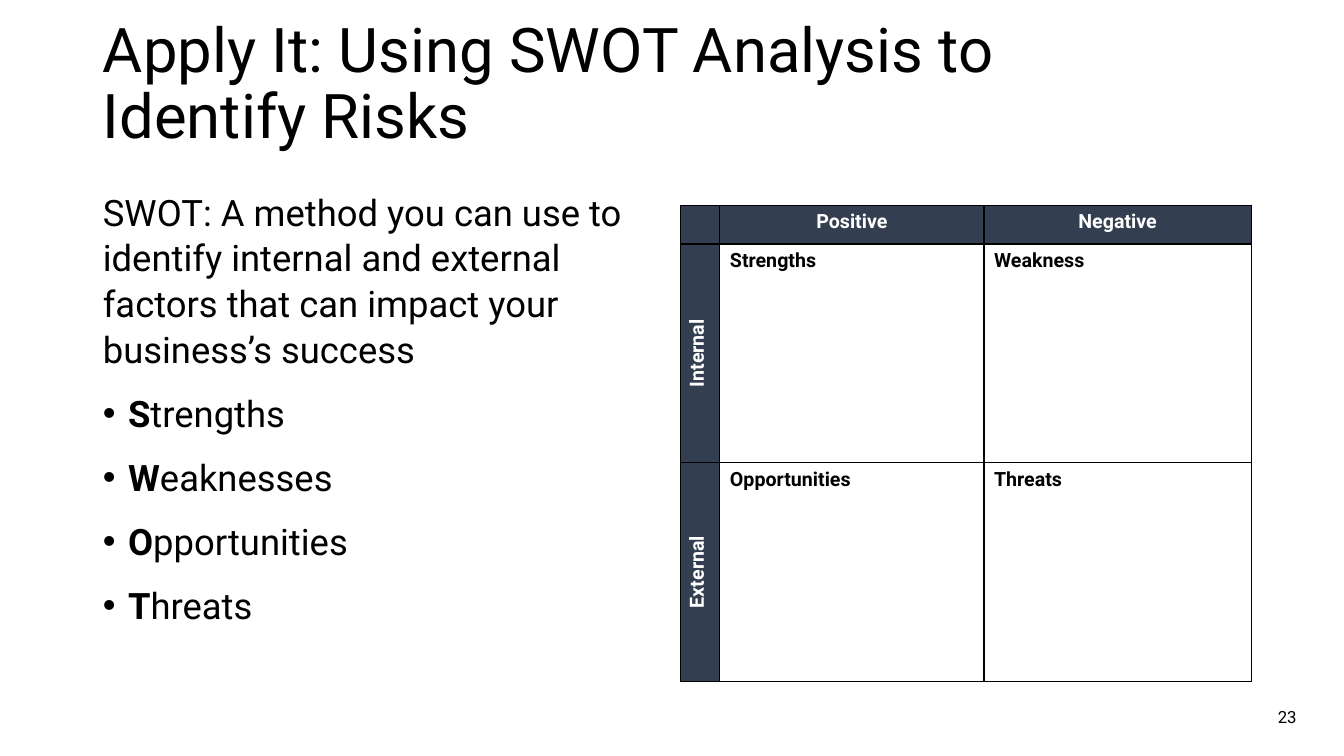
from lxml import etree
from pptx import Presentation
from pptx.dml.color import RGBColor
from pptx.enum.text import MSO_ANCHOR, MSO_AUTO_SIZE, PP_ALIGN
from pptx.oxml.ns import qn
from pptx.util import Inches, Pt

LEFT, CENTER, RIGHT = PP_ALIGN.LEFT, PP_ALIGN.CENTER, PP_ALIGN.RIGHT
TOP, MIDDLE, BOTTOM = MSO_ANCHOR.TOP, MSO_ANCHOR.MIDDLE, MSO_ANCHOR.BOTTOM
NO_FIT = MSO_AUTO_SIZE.NONE

FONT = "Roboto"
BLACK, WHITE, NAVY = "000000", "FFFFFF", "333F50"

TITLE = "Apply It: Using SWOT Analysis to Identify Risks"
INTRO = ("SWOT: A method you can use to identify internal and external "
         "factors that can impact your business’s success")
PARTS = ["Strengths", "Weaknesses", "Opportunities", "Threats"]
GRID = [
    ["", "Positive", "Negative"],
    ["Internal", "Strengths", "Weakness"],
    ["External", "Opportunities", "Threats"],
]
COLS = [0.39, 2.62, 2.65]
ROWS = [0.36, 2.17, 2.17]
PAGE = "23"


def paint(hue):
    return RGBColor.from_string(hue)


def add_run(para, text, size, hue=BLACK, bold=False):
    run = para.add_run()
    run.text = text
    look = {"name": FONT, "size": Pt(size), "bold": bold}
    for key, value in look.items():
        setattr(run.font, key, value)
    run.font.color.rgb = paint(hue)


def set_frame(shape, box, anchor):
    """Move the shape and return its cleared text frame."""
    for key, value in zip(("left", "top", "width", "height"), box):
        setattr(shape, key, Inches(value))
    frame = shape.text_frame
    look = {"word_wrap": True, "auto_size": NO_FIT, "vertical_anchor": anchor}
    for key, value in look.items():
        setattr(frame, key, value)
    return frame


def set_bullet(para, mark=None):
    props = para._p.get_or_add_pPr()
    inset = Inches(0.25) if mark else 0
    props.set("marL", str(inset))
    props.set("indent", str(-inset))
    if mark:
        font = etree.SubElement(props, qn("a:buFont"))
        font.set("typeface", "Arial")
        etree.SubElement(props, qn("a:buChar")).set("char", mark)
    else:
        etree.SubElement(props, qn("a:buNone"))


def set_border(cell):
    props = cell._tc.get_or_add_tcPr()
    for side in ("lnL", "lnR", "lnT", "lnB"):
        line = etree.SubElement(props, qn("a:" + side))
        line.set("w", str(Pt(1)))
        fill = etree.SubElement(line, qn("a:solidFill"))
        etree.SubElement(fill, qn("a:srgbClr")).set("val", BLACK)


def add_grid(slide):
    shape = slide.shapes.add_table(
        len(ROWS), len(COLS), Inches(6.75), Inches(2.04),
        Inches(sum(COLS)), Inches(sum(ROWS)))
    table = shape.table
    for col, width in zip(table.columns, COLS):
        col.width = Inches(width)
    for row, height in zip(table.rows, ROWS):
        row.height = Inches(height)
    for r, words in enumerate(GRID):
        for c, word in enumerate(words):
            cell = table.cell(r, c)
            head = r == 0 or c == 0
            set_border(cell)
            cell.fill.solid()
            cell.fill.fore_color.rgb = paint(NAVY if head else WHITE)
            if r and not c:
                cell._tc.get_or_add_tcPr().set("vert", "vert270")
            para = cell.text_frame.paragraphs[0]
            para.alignment = CENTER if head else LEFT
            add_run(para, word, 14, WHITE if head else BLACK, True)


def add_body(shape):
    frame = set_frame(shape, (0.92, 1.81, 5.67, 4.76), TOP)
    for i, text in enumerate([INTRO] + PARTS):
        para = frame.add_paragraph() if i else frame.paragraphs[0]
        look = {"line_spacing": 1.05, "space_before": Pt(10 if i else 0),
                "space_after": Pt(3)}
        for key, value in look.items():
            setattr(para, key, value)
        set_bullet(para, "•" if i else None)
        if i:
            add_run(para, text[0], 26, bold=True)
            add_run(para, text[1:], 26)
        else:
            add_run(para, text, 26)


def main():
    deck = Presentation()
    deck.slide_width, deck.slide_height = Inches(13.33), Inches(7.5)
    slide = deck.slides.add_slide(deck.slide_layouts[1])

    frame = set_frame(slide.shapes.title, (0.92, 0, 11.19, 1.56), BOTTOM)
    para = frame.paragraphs[0]
    para.alignment, para.line_spacing = LEFT, 0.9
    add_run(para, TITLE, 44)

    add_body(slide.placeholders[1])
    add_grid(slide)

    note = slide.shapes.add_textbox(0, 0, 0, 0)
    para = set_frame(note, (9.96, 6.91, 3, 0.4), MIDDLE).paragraphs[0]
    para.alignment = RIGHT
    add_run(para, PAGE, 12)

    deck.save("out.pptx")


if __name__ == "__main__":
    main()
